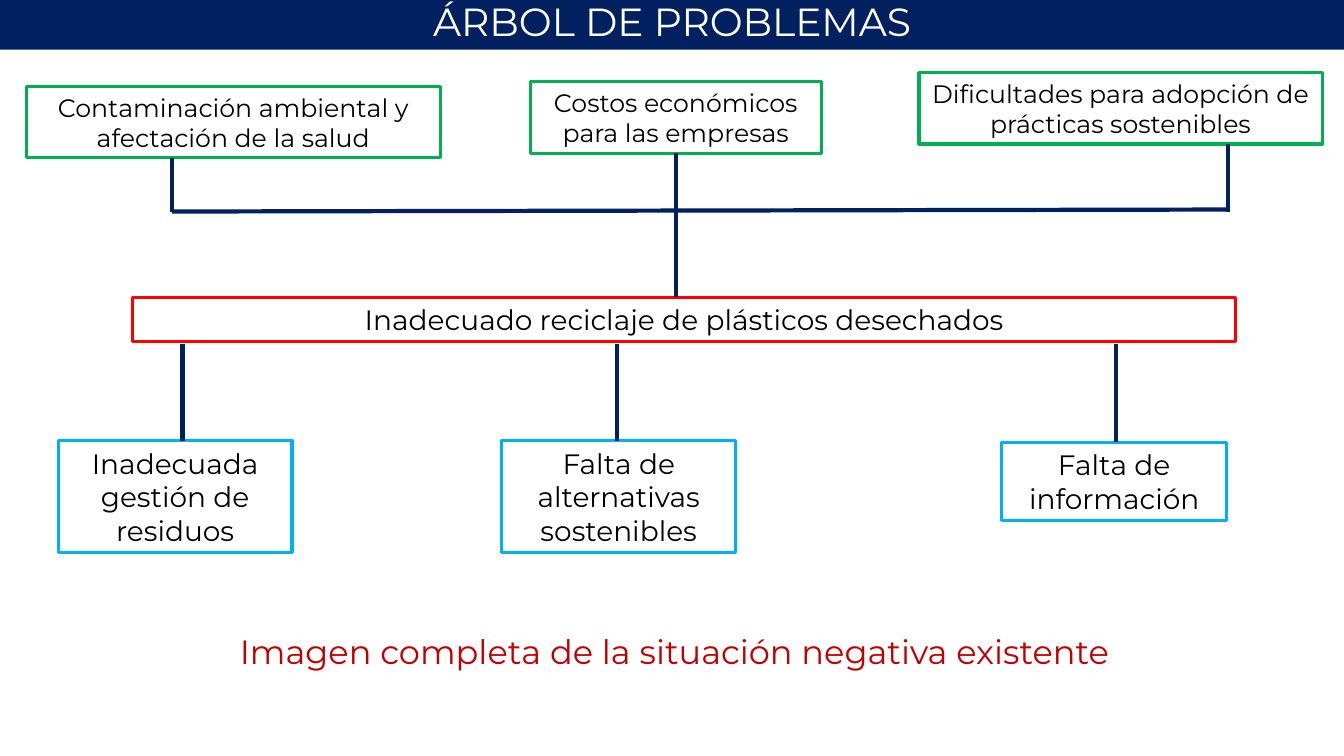
from lxml import etree
from pptx import Presentation
from pptx import util as u
from pptx.dml.color import RGBColor
from pptx.enum import shapes, text
from pptx.oxml import ns

COLORS = {
    "navy": "002060",
    "effect": "00B050",
    "problem": "FF0000",
    "cause": "00B0F0",
    "caption": "C00000",
    "text": "000000",
    "title": "FFFFFF",
}
FONT = "Montserrat"
SLIDE_W, SLIDE_H = 33.87, 19.05
TRUNK_X = 17.03

EFFECTS = [
    ("Contaminación ambiental y afectación de la salud", 0, 0.35, 10.44, 3.68),
    ("Costos económicos para las empresas", 12.7, 0.23, 7.34, 16.37),
    ("Dificultades para adopción de prácticas sostenibles", 22.5, 0, 10.16, 30.28),
]
CAUSES = [
    ("Inadecuada gestión de residuos", 0, 0, 5.89, 2.82, 3.13),
    ("Falta de alternativas sostenibles", 11.18, 0, 5.89, 2.82, 14.07),
    ("Falta de información", 23.78, 0.05, 5.66, 1.96, 26.65),
]


def rgb(name):
    return RGBColor.from_string(COLORS[name])


def place(sp, x, y, w, h):
    sp.left, sp.top, sp.width, sp.height = (u.Cm(v) for v in (x, y, w, h))


def write(sp, words, size, color):
    tf = sp.text_frame
    tf.text = words
    tf.word_wrap = True
    tf.auto_size = text.MSO_AUTO_SIZE.NONE
    tf.vertical_anchor = text.MSO_ANCHOR.MIDDLE
    p = tf.paragraphs[0]
    p.alignment = text.PP_ALIGN.CENTER
    font = p.runs[0].font
    font.name = FONT
    font.size = u.Pt(size)
    font.color.rgb = rgb(color)


def add_box(s, words, x, y, w, h, size, color):
    sp = s.shapes.add_shape(
        shapes.MSO_SHAPE.RECTANGLE, u.Cm(x), u.Cm(y), u.Cm(w), u.Cm(h))
    sp.shadow.inherit = False
    sp.fill.background()
    sp.line.color.rgb = rgb(color)
    sp.line.width = u.Pt(2.25)
    write(sp, words, size, "text")


def add_line(s, x1, y1, x2, y2):
    c = s.shapes.add_connector(
        shapes.MSO_CONNECTOR.STRAIGHT, u.Cm(x1), u.Cm(y1), u.Cm(x2), u.Cm(y2))
    c.line.color.rgb = rgb("navy")
    c.line.width = u.Pt(3)
    etree.SubElement(c._element.spPr, ns.qn("a:effectLst"))


def add_title(s, x, y, w, h):
    sp = s.shapes.title
    place(sp, x, y, w, h)
    sp.fill.solid()
    sp.fill.fore_color.rgb = rgb("navy")
    write(sp, "ÁRBOL DE PROBLEMAS", 28, "title")


def add_effects(s, x, y, h):
    box_h = 1.8
    bus_y = y + h
    for words, dx, dy, w, stem in EFFECTS:
        add_box(s, words, x + dx, y + dy, w, box_h, 18, "effect")
        add_line(s, x + stem, y + dy + box_h, x + stem, bus_y)
    add_line(s, x + EFFECTS[0][-1], bus_y, x + EFFECTS[-1][-1], bus_y - 0.05)


def add_problem(s, x, y, w, h, bus_y):
    add_box(s, "Inadecuado reciclaje de plásticos desechados",
            x, y, w, h, 20, "problem")
    add_line(s, TRUNK_X, bus_y, TRUNK_X, y)


def add_causes(s, x, y, stem_h):
    top = y + stem_h
    for words, dx, dy, w, h, stem in CAUSES:
        add_box(s, words, x + dx, top + dy, w, h, 20, "cause")
        add_line(s, x + stem, y, x + stem, top + dy)


def add_caption(s, x, y, w, h):
    sp = s.shapes.add_textbox(u.Cm(x), u.Cm(y), u.Cm(w), u.Cm(h))
    write(sp, "Imagen completa de la situación negativa existente", 24, "caption")


def main():
    prs = Presentation()
    prs.slide_width, prs.slide_height = u.Cm(SLIDE_W), u.Cm(SLIDE_H)
    s = prs.slides.add_slide(prs.slide_layouts[5])
    add_effects(s, 0.66, 1.83, 3.5)
    add_problem(s, 3.35, 7.49, 27.79, 1.12, 5.33)
    add_causes(s, 1.47, 8.66, 2.44)
    add_title(s, 0, -0.2, SLIDE_W, 1.45)
    add_caption(s, 3.1, 15.77, 27.79, 1.27)
    prs.save("out.pptx")


if __name__ == "__main__":
    main()
